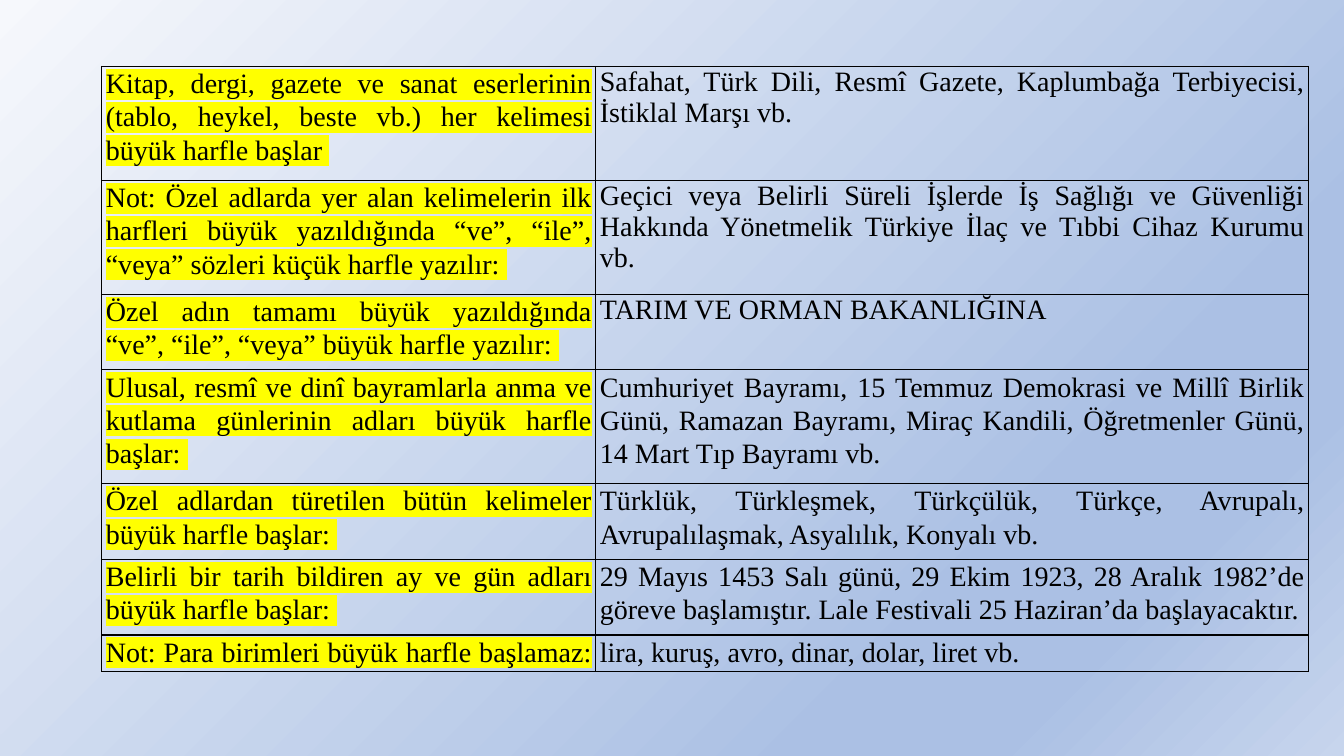
from dataclasses import dataclass

from lxml import etree
from pptx import Presentation
from pptx import util as u
from pptx.dml.color import RGBColor
from pptx.enum import text
from pptx.oxml import ns


@dataclass(frozen=True)
class Theme:
    font: str = "Times New Roman"
    size: int = 20
    ink: str = "000000"
    marker: str = "FFFF00"
    border: int = 1
    backdrop: tuple = ((0, "F6F8FC"), (74, "ABC0E4"), (83, "ABC0E4"), (100, "C7D5ED"))


THEME = Theme()
COLUMNS = (4.9, 7.07)
CELL = {
    "margin_left": u.Inches(0.04),
    "margin_right": u.Inches(0.04),
    "margin_top": 0,
    "margin_bottom": 0,
}
JUSTIFIED = {"alignment": text.PP_ALIGN.JUSTIFY}
SPACED = {**JUSTIFIED, "line_spacing": 1.07, "space_after": u.Pt(8)}
FONT = {"name": THEME.font, "size": u.Pt(THEME.size)}

# Row height, rule, examples, format of the examples
RULES = (
    (1.13,
     "Kitap, dergi, gazete ve sanat eserlerinin (tablo, heykel, beste vb.) her kelimesi büyük harfle başlar ",
     "Safahat, Türk Dili, Resmî Gazete, Kaplumbağa Terbiyecisi, İstiklal Marşı vb.",
     JUSTIFIED),
    (1.13,
     "Not: Özel adlarda yer alan kelimelerin ilk harfleri büyük yazıldığında “ve”, “ile”, “veya” sözleri "
     "küçük harfle yazılır: ",
     "Geçici veya Belirli Süreli İşlerde İş Sağlığı ve Güvenliği Hakkında Yönetmelik Türkiye İlaç ve "
     "Tıbbi Cihaz Kurumu vb.",
     JUSTIFIED),
    (0.75,
     "Özel adın tamamı büyük yazıldığında “ve”, “ile”, “veya” büyük harfle yazılır: ",
     "TARIM VE ORMAN BAKANLIĞINA",
     JUSTIFIED),
    (1.13,
     "Ulusal, resmî ve dinî bayramlarla anma ve kutlama günlerinin adları büyük harfle başlar: ",
     "Cumhuriyet Bayramı, 15 Temmuz Demokrasi ve Millî Birlik Günü, Ramazan Bayramı, Miraç Kandili, "
     "Öğretmenler Günü, 14 Mart Tıp Bayramı vb.",
     SPACED),
    (0.75,
     "Özel adlardan türetilen bütün kelimeler büyük harfle başlar: ",
     "Türklük, Türkleşmek, Türkçülük, Türkçe, Avrupalı, Avrupalılaşmak, Asyalılık, Konyalı vb.",
     SPACED),
    (0.75,
     "Belirli bir tarih bildiren ay ve gün adları büyük harfle başlar: ",
     "29 Mayıs 1453 Salı günü, 29 Ekim 1923, 28 Aralık 1982’de göreve başlamıştır. Lale Festivali "
     "25 Haziran’da başlayacaktır.",
     SPACED),
    (0.36,
     "Not: Para birimleri büyük harfle başlamaz: ",
     "lira, kuruş, avro, dinar, dolar, liret vb.",
     SPACED),
)


def apply(target, values):
    for name, value in values.items():
        setattr(target, name, value)


def add_color(parent, color):
    etree.SubElement(parent, ns.qn("a:srgbClr"), val=color)


def paint_background(page):
    fill = page.background.fill
    fill.gradient()
    fill.gradient_angle = 315
    stops = next(page.background._cSld.iter(ns.qn("a:gsLst")))
    for stop in list(stops):
        stops.remove(stop)
    for position, color in THEME.backdrop:
        add_color(etree.SubElement(stops, ns.qn("a:gs"), pos=str(position * 1000)), color)


def draw_borders(cell):
    properties = cell._tc.get_or_add_tcPr()
    for side in "LRTB":
        line = etree.SubElement(properties, ns.qn(f"a:ln{side}"), w=str(u.Pt(THEME.border)))
        add_color(etree.SubElement(line, ns.qn("a:solidFill")), THEME.ink)


def highlight(span):
    marker = etree.Element(ns.qn("a:highlight"))
    add_color(marker, THEME.marker)
    span._r.rPr.find(ns.qn("a:solidFill")).addnext(marker)


def fill_cell(cell, words, layout, marked):
    apply(cell, CELL)
    draw_borders(cell)
    cell.fill.background()
    para = cell.text_frame.paragraphs[0]
    apply(para, layout)
    span = para.add_run()
    span.text = words
    apply(span.font, FONT)
    span.font.color.rgb = RGBColor.from_string(THEME.ink)
    if marked:
        highlight(span)


def add_rules_table(page):
    heights = [rule[0] for rule in RULES]
    frame = page.shapes.add_table(
        len(RULES), len(COLUMNS), u.Inches(1.01), u.Inches(0.66),
        u.Inches(sum(COLUMNS)), u.Inches(sum(heights)))
    table = frame.table
    apply(table, {"first_row": False, "horz_banding": False})
    for column, width in zip(table.columns, COLUMNS):
        column.width = u.Inches(width)
    for row, (height, rule, examples, layout) in zip(table.rows, RULES):
        row.height = u.Inches(height)
        fill_cell(row.cells[0], rule, SPACED, marked=True)
        fill_cell(row.cells[1], examples, layout, marked=False)


def main():
    deck = Presentation()
    apply(deck, {"slide_width": u.Inches(13.33), "slide_height": u.Inches(7.5)})
    page = deck.slides.add_slide(deck.slide_layouts[6])
    # Diagonal blue backdrop
    paint_background(page)
    # Spelling rules with their examples
    add_rules_table(page)
    deck.save("out.pptx")


if __name__ == "__main__":
    main()
